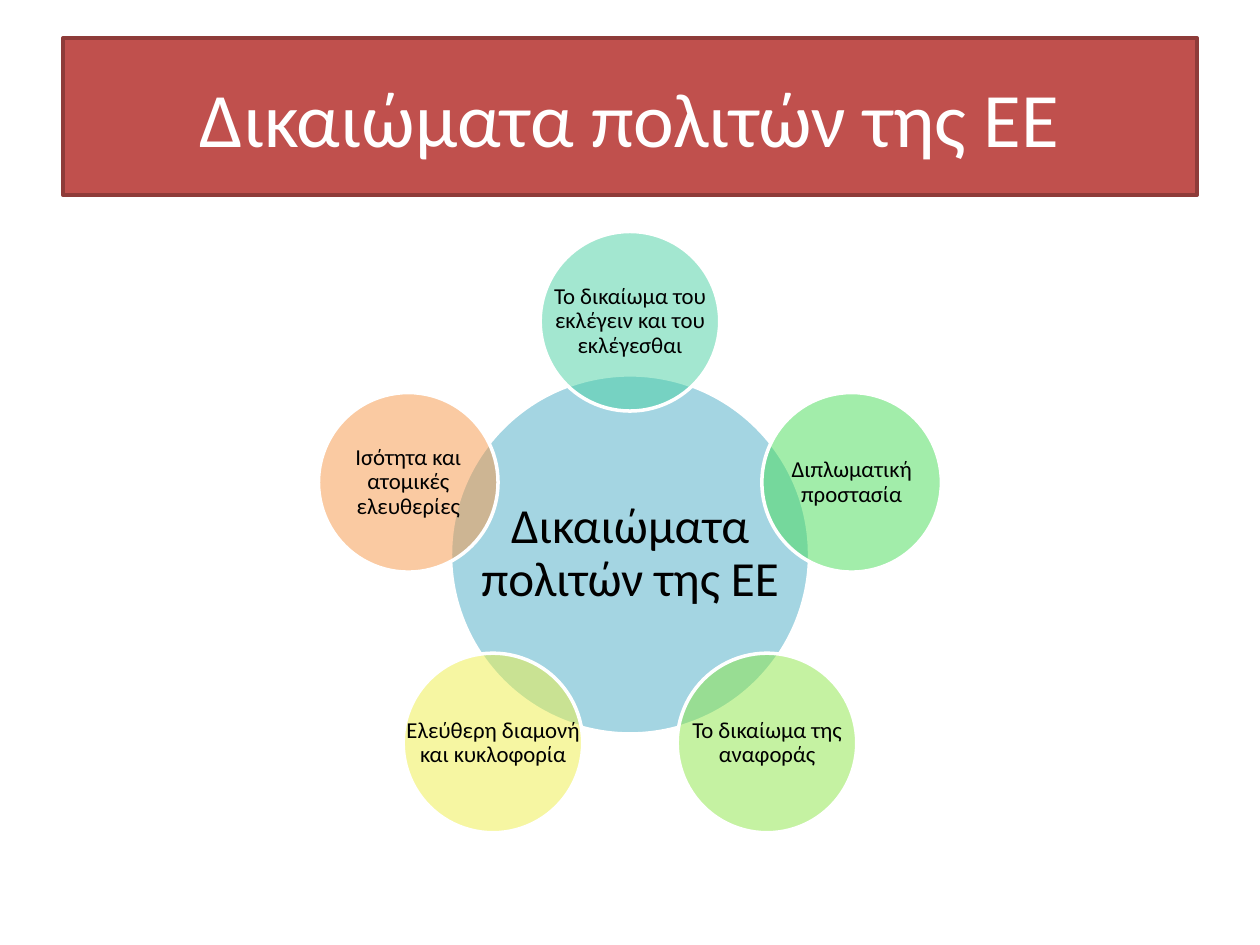
from math import cos, pi, sin

from lxml.etree import SubElement
from pptx import Presentation
from pptx.dml.color import RGBColor
from pptx.enum.shapes import MSO_SHAPE
from pptx.enum.text import MSO_ANCHOR, PP_ALIGN
from pptx.oxml.ns import qn
from pptx.util import Inches, Pt

WIDTH, HEIGHT = 10, 7.5
TOPIC = "Δικαιώματα πολιτών της ΕΕ"
RIGHTS = [
    ("Το δικαίωμα του εκλέγειν και του εκλέγεσθαι", "49D1A3"),
    ("Διπλωματική προστασία", "47DC57"),
    ("Το δικαίωμα της αναφοράς", "8DE646"),
    ("Ελεύθερη διαμονή και κυκλοφορία", "EEEF46"),
    ("Ισότητα και ατομικές ελευθερίες", "F79646"),
]
HUB_X, HUB_Y = WIDTH / 2, 4.4
HUB_SIZE = 0.38 * HEIGHT
RIGHT_SIZE = HUB_SIZE / 2
ORBIT = 1.85


def color(hex_code):
    return RGBColor.from_string(hex_code)


def add_outlined(slide, preset, box, fill, line):
    figure = slide.shapes.add_shape(preset, *map(Inches, box))
    figure.shadow.inherit = False
    figure.fill.solid()
    figure.fill.fore_color.rgb = color(fill)
    figure.line.color.rgb = color(line)
    figure.line.width = Pt(2)
    return figure


def write(frame, text, size, font_color, inset, spacing=1.0):
    """Put one centred, wrapping paragraph into a text frame."""
    frame.word_wrap = True
    frame.vertical_anchor = MSO_ANCHOR.MIDDLE
    frame.margin_left = frame.margin_right = Inches(inset)
    frame.margin_top = frame.margin_bottom = Inches(inset)
    paragraph = frame.paragraphs[0]
    paragraph.text = text
    paragraph.alignment = PP_ALIGN.CENTER
    paragraph.line_spacing = spacing
    paragraph.font.name = "Calibri"
    paragraph.font.size = Pt(size)
    paragraph.font.color.rgb = color(font_color)


def add_banner(slide, text):
    margin = 0.05 * WIDTH
    box = (margin, 0.04 * HEIGHT, WIDTH - 2 * margin, HEIGHT / 6)
    banner = add_outlined(slide, MSO_SHAPE.RECTANGLE, box, "C0504D", "8E3B39")
    write(banner.text_frame, text, 44, "FFFFFF", 0.05)


def add_circle(slide, center_x, center_y, diameter, text, size, fill):
    """Draw a half-transparent circle; its label spans the full diameter."""
    box = (center_x - diameter / 2, center_y - diameter / 2, diameter, diameter)
    circle = add_outlined(slide, MSO_SHAPE.OVAL, box, fill, "FFFFFF")
    fill_color = circle.fill._xPr.find(qn("a:solidFill"))[0]
    SubElement(fill_color, qn("a:alpha"), val="50000")
    label = slide.shapes.add_textbox(*map(Inches, box))
    write(label.text_frame, text, size, "000000", 0.01, spacing=0.9)


def main():
    prs = Presentation()
    prs.slide_width, prs.slide_height = Inches(WIDTH), Inches(HEIGHT)
    slide = prs.slides.add_slide(prs.slide_layouts[6])

    add_banner(slide, TOPIC)
    add_circle(slide, HUB_X, HUB_Y, HUB_SIZE, TOPIC, 28, "4BACC6")
    for index, (right, fill) in enumerate(RIGHTS):
        angle = 2 * pi * index / len(RIGHTS)
        center_x = HUB_X + ORBIT * sin(angle)
        center_y = HUB_Y - ORBIT * cos(angle)
        add_circle(slide, center_x, center_y, RIGHT_SIZE, right, 13, fill)

    prs.save("out.pptx")


if __name__ == "__main__":
    main()
